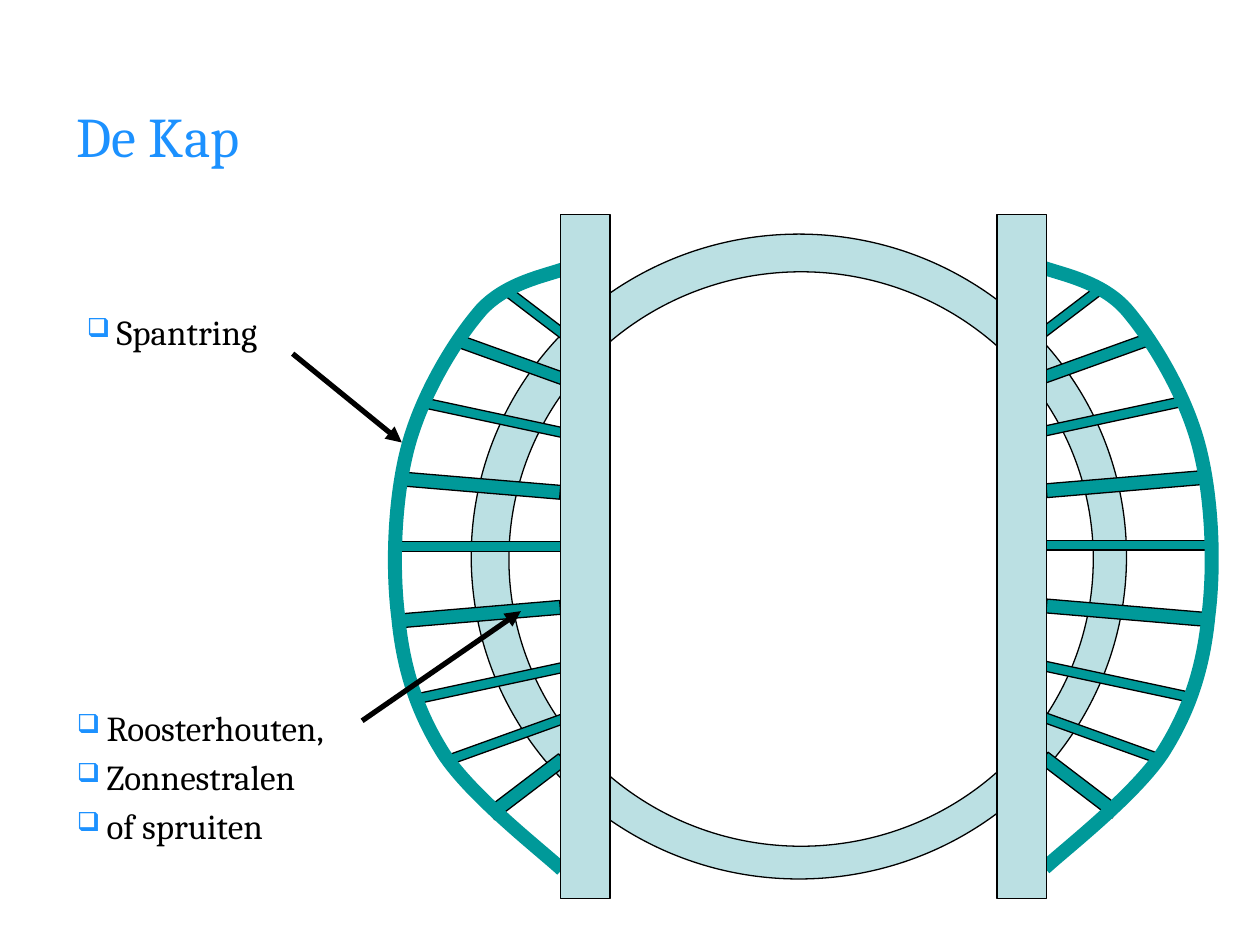
from lxml import etree
from pptx import Presentation
from pptx import util as u
from pptx.dml.color import RGBColor
from pptx.enum import shapes, text
from pptx.oxml.ns import qn

Cm = u.Cm
BLUE, PALE, TEAL, BLACK, WHITE = "1C91FF", "BBE0E3", "009999", "000000", "FFFFFF"

# Beams of the left wing: centre x, centre y, length, thickness, angle
SPOKES = [
    (1.70, 5.66, 3.40, 0.20, 0),
    (1.80, 7.02, 3.20, 0.28, -4.8),
    (1.98, 8.41, 3.20, 0.20, -12.1),
    (2.37, 9.52, 2.82, 0.20, -19.8),
    (2.72, 10.50, 1.83, 0.28, -37.3),
    (1.80, 4.43, 3.20, 0.28, 4.8),
    (2.08, 3.07, 3.00, 0.20, 12.1),
    (2.49, 1.93, 2.59, 0.25, 19.8),
    (2.95, 0.99, 1.57, 0.20, 37.3),
]
# Bézier points of the left rim, from bottom to top
RIM = [
    (3.43, 12.17), (3.02, 11.79), (1.60, 10.69), (1.04, 9.83),
    (0.51, 8.99), (0.23, 8.13), (0.13, 7.09), (0, 6.07),
    (0.05, 4.67), (0.33, 3.63), (0.61, 2.59), (1.27, 1.50),
    (1.80, 0.89), (2.36, 0.28), (3.25, 0.18), (3.63, 0),
]


def colour(value):
    return RGBColor.from_string(value)


def add_part(page, kind, left, top, width, height, fill, angle=0):
    part = page.shapes.add_shape(kind, Cm(left), Cm(top), Cm(width), Cm(height))
    part.shadow.inherit = False
    part.fill.solid()
    part.fill.fore_color.rgb = colour(fill)
    part.line.color.rgb = colour(BLACK)
    part.line.width = u.Pt(0.75)
    part.rotation = angle


def add_bullet(para, indent):
    properties = para._p.get_or_add_pPr()
    properties.set("marL", str(Cm(indent)))
    properties.set("indent", str(-Cm(indent)))
    tint = etree.SubElement(properties, qn("a:buClr"))
    etree.SubElement(tint, qn("a:srgbClr")).set("val", BLUE)
    etree.SubElement(properties, qn("a:buSzPct")).set("val", "75000")
    etree.SubElement(properties, qn("a:buChar")).set("char", "❑")


def add_text(page, lines, box, size=20, tint=BLACK, bullets=True,
             anchor=text.MSO_ANCHOR.TOP):
    frame = page.shapes.add_textbox(*map(Cm, box)).text_frame
    frame.word_wrap = True
    frame.vertical_anchor = anchor
    for number, line in enumerate(lines):
        para = frame.paragraphs[0] if number == 0 else frame.add_paragraph()
        if bullets:
            add_bullet(para, 0.6)
        if number:
            para.space_before = u.Pt(4)
        span = para.add_run()
        span.text = line
        span.font.name = "Cambria"
        span.font.size = u.Pt(size)
        span.font.color.rgb = colour(tint)


def add_arrow(page, start, end):
    arrow = page.shapes.add_connector(
        shapes.MSO_CONNECTOR.STRAIGHT, *map(Cm, start + end))
    arrow.line.color.rgb = colour(BLACK)
    arrow.line.width = u.Pt(3)
    etree.SubElement(arrow.line._get_or_add_ln(), qn("a:tailEnd")).set("type", "triangle")
    etree.SubElement(arrow._element.spPr, qn("a:effectLst"))


def add_curve(page, points, tint, width):
    """Draw a chain of cubic Bézier curves, three points to a curve."""
    points = [(Cm(x), Cm(y)) for x, y in points]
    builder = page.shapes.build_freeform(*points[0])
    builder.add_line_segments(points[1:], close=False)
    curve = builder.convert_to_shape()
    curve.shadow.inherit = False
    curve.fill.background()
    curve.line.color.rgb = colour(tint)
    curve.line.width = u.Pt(width)
    # Join every three straight segments into one curve
    segments = list(curve._element.iter(qn("a:lnTo")))
    outline = segments[0].getparent()
    for first in range(0, len(segments), 3):
        bend = etree.SubElement(outline, qn("a:cubicBezTo"))
        for segment in segments[first:first + 3]:
            bend.append(segment[0])
            outline.remove(segment)


def add_wing(page, left, top, width, mirrored=False):
    def across(x):
        return left + (width - x if mirrored else x)

    # Beams
    for x, y, length, thickness, angle in SPOKES:
        add_part(page, shapes.MSO_SHAPE.RECTANGLE, across(x) - length / 2,
                 top + y - thickness / 2, length, thickness, TEAL,
                 -angle if mirrored else angle)
    # Rim
    add_curve(page, [(across(x), top + y) for x, y in RIM], TEAL, 8)


def add_cap(page, left, top, height):
    # Ring
    oval = shapes.MSO_SHAPE.OVAL
    add_part(page, oval, left + 1.6, top + 0.4, 13.21, 13, PALE)
    add_part(page, oval, left + 2.36, top + 1.16, 11.78, 11.58, WHITE)
    # Wings
    add_wing(page, left, top + 1.04, 3.4)
    add_wing(page, left + 13.19, top + 1.01, 3.4, mirrored=True)
    # Upright beams
    for x in (3.4, 12.2):
        add_part(page, shapes.MSO_SHAPE.RECTANGLE, left + x, top, 1, height, PALE)


def add_labels(page):
    add_arrow(page, (7.3, 14.53), (10.5, 12.32))
    add_arrow(page, (5.9, 7.13), (8.1, 8.92))
    add_text(page, ["Spantring"], (1.5, 6.13, 4.34, 1.45))
    add_text(page, ["Roosterhouten,", "Zonnestralen", "of spruiten"],
             (1.3, 14.12, 6.5, 3.81))


def main():
    deck = Presentation()
    deck.slide_width, deck.slide_height = Cm(25.4), Cm(19.05)
    page = deck.slides.add_slide(deck.slide_layouts[6])
    add_text(page, ["De Kap"], (1.3, 1.85, 20.83, 1.75), size=32, tint=BLUE,
             bullets=False, anchor=text.MSO_ANCHOR.MIDDLE)
    add_cap(page, 7.9, 4.32, 13.8)
    add_labels(page)
    deck.save("out.pptx")


if __name__ == "__main__":
    main()
